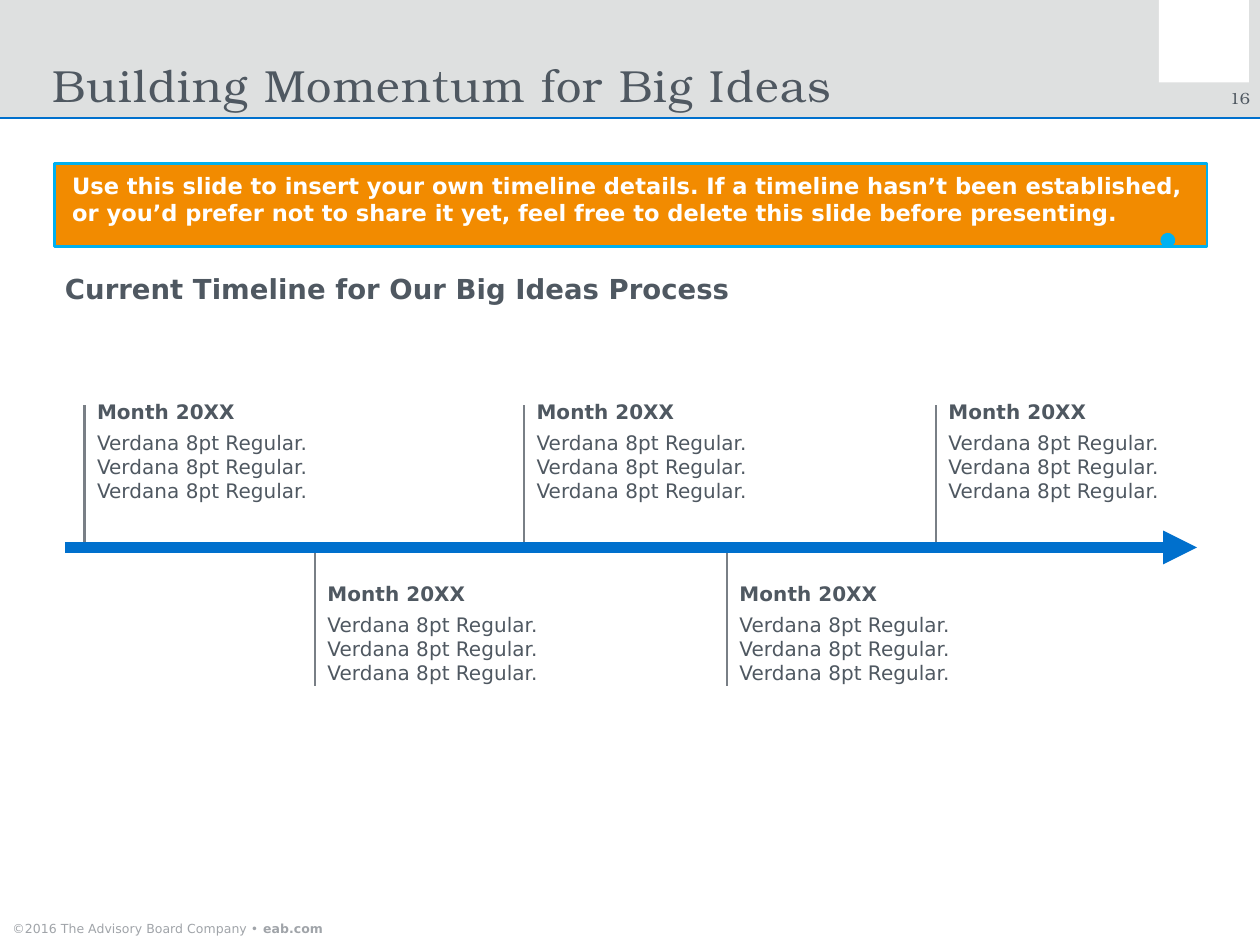
import dataclasses

import lxml.etree
import pptx
import pptx.dml.color
import pptx.enum.shapes
import pptx.enum.text
import pptx.oxml.ns
import pptx.util

Pt = pptx.util.Pt
Shape = pptx.enum.shapes.MSO_SHAPE
Align = pptx.enum.text.PP_ALIGN
Anchor = pptx.enum.text.MSO_ANCHOR


@dataclasses.dataclass(frozen=True)
class Theme:
    """Colours, fonts and type sizes of the deck."""
    ink: str = "4F5861"
    muted: str = "A0A4A9"
    tick: str = "797F86"
    blue: str = "0070CD"
    cyan: str = "00B0F0"
    orange: str = "F28B00"
    band: str = "DEE0E0"
    white: str = "FFFFFF"
    sans: str = "DejaVu Sans"
    serif: str = "TeX Gyre Bonum"
    title: float = 18
    heading: float = 11
    note: float = 9
    body: float = 8
    number: float = 6.5
    footer: float = 5


THEME = Theme()


def apply(target, values):
    """Set each attribute of a target from a dict."""
    for name, value in values.items():
        setattr(target, name, value)


def colour(code):
    """Turn a hex code into a colour."""
    return pptx.dml.color.RGBColor.from_string(code)


def add_end(line, kind):
    """Put an end mark on the far end of a line."""
    lxml.etree.SubElement(line._get_or_add_ln(), pptx.oxml.ns.qn("a:tailEnd"), type=kind)


def add_rule(page, start, end, code, weight, arrow=None):
    """Draw a straight line, with an arrowhead if one is named."""
    points = [Pt(value) for value in (*start, *end)]
    rule = page.shapes.add_connector(pptx.enum.shapes.MSO_CONNECTOR.STRAIGHT, *points)
    rule.line.color.rgb = colour(code)
    rule.line.width = Pt(weight)
    if arrow:
        add_end(rule.line, arrow)
    lxml.etree.SubElement(rule._element.spPr, pptx.oxml.ns.qn("a:effectLst"))
    return rule


def add_panel(page, kind, bounds, fill):
    """Draw a filled preset shape without outline or shadow."""
    panel = page.shapes.add_shape(kind, *map(Pt, bounds))
    panel.shadow.inherit = False
    panel.fill.solid()
    panel.fill.fore_color.rgb = colour(fill)
    panel.line.fill.background()
    return panel


def write(box, paragraphs, font, size, code, margins=(0, 0, 0, 0), anchor=Anchor.TOP, **layout):
    """Fill a box with paragraphs, each a list of (text, bold) spans."""
    frame = box.text_frame
    sides = ("margin_left", "margin_top", "margin_right", "margin_bottom")
    apply(frame, dict(zip(sides, map(Pt, margins)), word_wrap=True, vertical_anchor=anchor))
    for index, spans in enumerate(paragraphs):
        para = frame.add_paragraph() if index else frame.paragraphs[0]
        apply(para, {"alignment": Align.LEFT, **layout})
        if index:
            para.space_before = Pt(3)
        for text, bold in spans:
            span = para.add_run()
            span.text = text
            apply(span.font, {"name": font, "size": Pt(size), "bold": bold})
            span.font.color.rgb = colour(code)


def add_text(page, bounds, paragraphs, font, size, code, **options):
    """Add a text box and fill it."""
    box = page.shapes.add_textbox(*map(Pt, bounds))
    write(box, paragraphs, font, size, code, **options)
    return box


def add_header(page):
    """Draw the title band with its emblem block and page number."""
    add_panel(page, Shape.RECTANGLE, (0, 0, 504, 47.2), THEME.band)
    add_panel(page, Shape.RECTANGLE, (463.6, 0, 36, 33), THEME.white)
    add_rule(page, (0, 47.2), (504, 47.2), THEME.blue, 0.75)
    number = add_panel(page, Shape.RECTANGLE, (485.3, 35.3, 14.7, 8), THEME.band)
    write(number, [[("16", False)]], THEME.serif, THEME.number, THEME.ink, alignment=Align.RIGHT)
    title = add_text(page, (21, 24.5, 432, 20), [[("Building Momentum for Big Ideas", False)]],
                     THEME.serif, THEME.title, THEME.ink,
                     anchor=Anchor.BOTTOM, line_spacing=Pt(20))
    for span in title.text_frame.paragraphs[0].runs:
        span._r.get_or_add_rPr().set("spc", "50")


def add_note(page):
    """Draw the orange callout with the instruction."""
    note = add_panel(page, Shape.LINE_CALLOUT_1, (21.8, 65.3, 461, 33.3), THEME.orange)
    for index, value in enumerate((0.911, 0.972, 0.925, 0.966)):
        note.adjustments[index] = value
    note.line.color.rgb = colour(THEME.cyan)
    note.line.width = Pt(1)
    add_end(note.line, "oval")
    text = ("Use this slide to insert your own timeline details. If a timeline hasn’t been "
            "established, or you’d prefer not to share it yet, feel free to delete this slide "
            "before presenting.")
    write(note, [[(text, True)]], THEME.sans, THEME.note, THEME.white, margins=(7.2, 3.6, 7.2, 3.6))


def add_milestone(page, left, top, tick_top, tick_bottom):
    """Draw one tick with its date and details."""
    add_rule(page, (left, tick_top), (left, tick_bottom), THEME.tick, 1)
    details = " ".join(["Verdana 8pt Regular."] * 3)
    add_text(page, (left + 5, top, 95, 42), [[("Month 20XX", True)], [(details, False)]],
             THEME.sans, THEME.body, THEME.ink)


def add_timeline(page):
    """Draw the milestones, alternating above and below the arrow."""
    above = (159.8, 162, 219)
    below = (232.6, 221, 274.3)
    for index, left in enumerate((33.8, 126, 209.6, 290.8, 374.4)):
        add_milestone(page, left, *(below if index % 2 else above))
    add_rule(page, (26, 219), (478.8, 219), THEME.blue, 4.5, arrow="triangle")


def main():
    """Build the slide and save it."""
    deck = pptx.Presentation()
    apply(deck, {"slide_width": Pt(504), "slide_height": Pt(378)})
    page = deck.slides.add_slide(deck.slide_layouts[6])
    add_header(page)
    add_text(page, (0, 368.5, 166.5, 9.5),
             [[("©2016 The Advisory Board Company • ", False), ("eab.com", True)]],
             THEME.sans, THEME.footer, THEME.muted,
             margins=(5, 0, 0, 3.6), anchor=Anchor.BOTTOM)
    add_note(page)
    add_text(page, (26, 108.9, 361.5, 13.5), [[("Current Timeline for Our Big Ideas Process", True)]],
             THEME.sans, THEME.heading, THEME.ink)
    add_timeline(page)
    deck.save("out.pptx")


if __name__ == "__main__":
    main()
